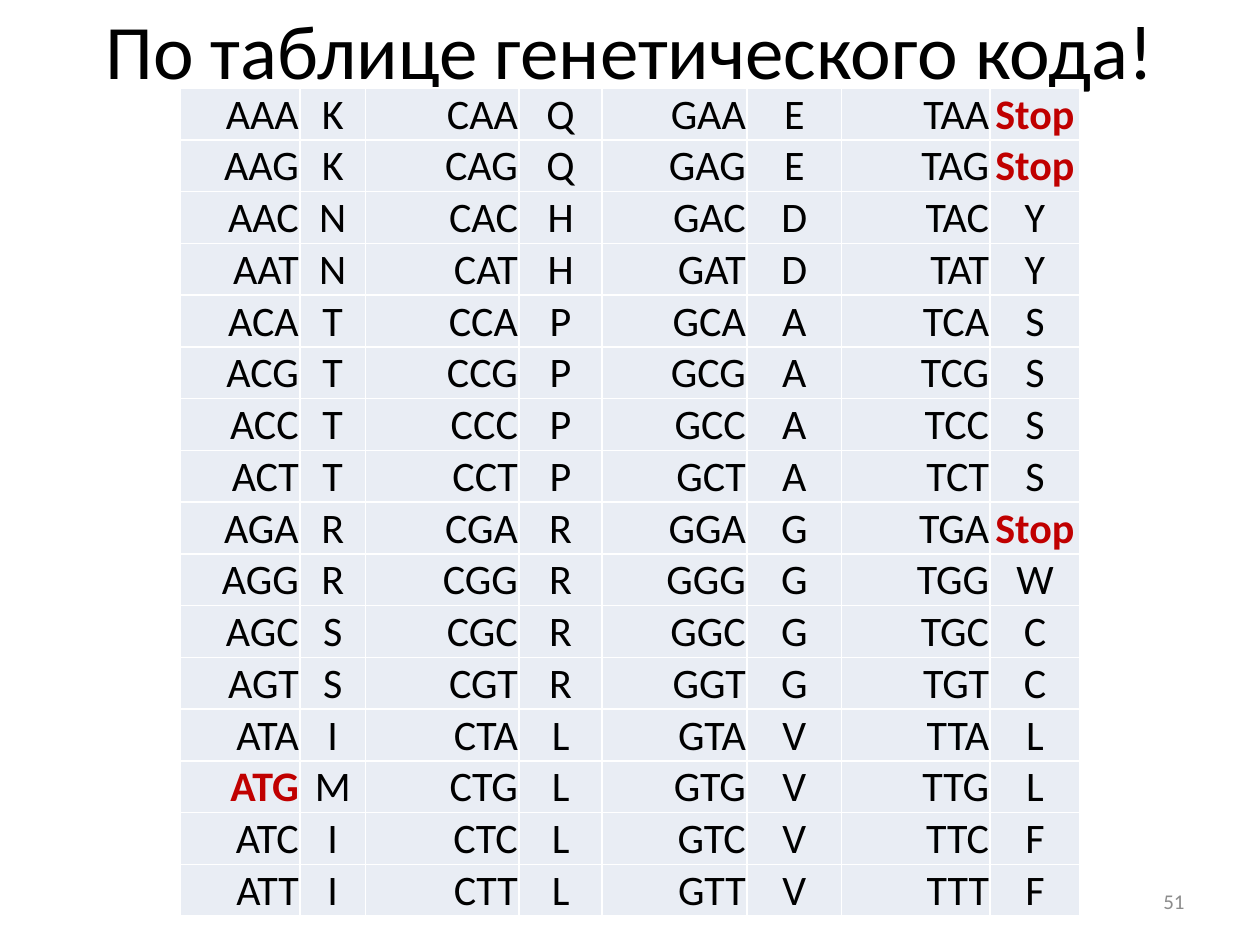
from dataclasses import dataclass
from itertools import product

from lxml.etree import SubElement
from pptx import Presentation
from pptx.dml.color import RGBColor
from pptx.enum.text import MSO_ANCHOR as Anchor, PP_ALIGN as Align
from pptx.oxml.ns import qn
from pptx.slide import Slide
from pptx.table import _Cell as Cell
from pptx.text.text import _Paragraph as Paragraph
from pptx.util import Pt

FONT = "Calibri"
BLACK = RGBColor(0x00, 0x00, 0x00)
GRAY = RGBColor(0x8C, 0x8C, 0x8C)
RED = RGBColor(0xC0, 0x00, 0x00)
WHITE = RGBColor(0xFF, 0xFF, 0xFF)
CELL_FILL = RGBColor(0xE9, 0xED, 0xF4)

FIRST_BASES = "ACGT"
SECOND_BASES = "ACGT"
THIRD_BASES = "AGCT"
START_CODON = "ATG"
STOP = "Stop"
# One letter per codon, "*" for stop, in the order of the table rows.
AMINO_ACIDS = {
    "A": "KKNNTTTTRRSSIMII",
    "C": "QQHHPPPPRRRRLLLL",
    "G": "EEDDAAAAGGGGVVVV",
    "T": "**YYSSSS*WCCLLFF",
}

TABLE_LEFT, TABLE_TOP = 103, 50.4
COLUMN_WIDTHS = (68.4, 37.4, 87.8, 47.5, 82.8, 54, 85, 51.1)
ROW_HEIGHT = 29.57
CELL_INSET = 0.7


@dataclass(frozen=True)
class Label:
    text: str
    left: float
    top: float
    width: float
    height: float
    size: float
    color: RGBColor
    align: Align


LABELS = (
    Label("По таблице генетического кода!", 36, -17.3, 648, 90, 44, BLACK, Align.CENTER),
    Label("51", 516, 500.5, 168, 28.8, 12, GRAY, Align.RIGHT),
)


def format_paragraph(para: Paragraph, size: float, color: RGBColor,
                     align: Align, bold: bool = False) -> None:
    para.alignment = align
    for span in para.runs:
        span.font.name = FONT
        span.font.size = Pt(size)
        span.font.bold = bold
        span.font.color.rgb = color


def add_label(page: Slide, label: Label) -> None:
    box = page.shapes.add_textbox(Pt(label.left), Pt(label.top),
                                  Pt(label.width), Pt(label.height))
    frame = box.text_frame
    frame.word_wrap = True
    frame.vertical_anchor = Anchor.MIDDLE
    frame.text = label.text
    format_paragraph(frame.paragraphs[0], label.size, label.color, label.align)


def add_borders(cell: Cell) -> None:
    properties = cell._tc.get_or_add_tcPr()
    for side in ("a:lnL", "a:lnR", "a:lnT", "a:lnB"):
        line = SubElement(properties, qn(side), w=str(Pt(1)))
        fill = SubElement(line, qn("a:solidFill"))
        SubElement(fill, qn("a:srgbClr"), val=str(WHITE))


def fill_cell(cell: Cell, text: str, align: Align) -> None:
    add_borders(cell)
    cell.fill.solid()
    cell.fill.fore_color.rgb = CELL_FILL
    cell.margin_left = cell.margin_right = cell.margin_top = Pt(CELL_INSET)
    cell.margin_bottom = Pt(0)
    cell.vertical_anchor = Anchor.BOTTOM
    cell.text = text
    marked = text in (START_CODON, STOP)
    format_paragraph(cell.text_frame.paragraphs[0], 24,
                     RED if marked else BLACK, align, marked)


def add_codon_table(page: Slide) -> None:
    endings = list(product(SECOND_BASES, THIRD_BASES))
    frame = page.shapes.add_table(
        len(endings), len(COLUMN_WIDTHS), Pt(TABLE_LEFT), Pt(TABLE_TOP),
        Pt(sum(COLUMN_WIDTHS)), Pt(ROW_HEIGHT * len(endings)))
    table = frame.table
    table.first_row = table.horz_banding = False
    for column, width in zip(table.columns, COLUMN_WIDTHS):
        column.width = Pt(width)
    for row_index, (second, third) in enumerate(endings):
        table.rows[row_index].height = Pt(ROW_HEIGHT)
        for pair, first in enumerate(FIRST_BASES):
            amino_acid = AMINO_ACIDS[first][row_index].replace("*", STOP)
            fill_cell(table.cell(row_index, 2 * pair), first + second + third, Align.RIGHT)
            fill_cell(table.cell(row_index, 2 * pair + 1), amino_acid, Align.CENTER)


def main() -> None:
    deck = Presentation()
    deck.slide_width, deck.slide_height = Pt(720), Pt(540)
    page = deck.slides.add_slide(deck.slide_layouts[6])
    for label in LABELS:
        add_label(page, label)
    add_codon_table(page)
    deck.save("out.pptx")


if __name__ == "__main__":
    main()
